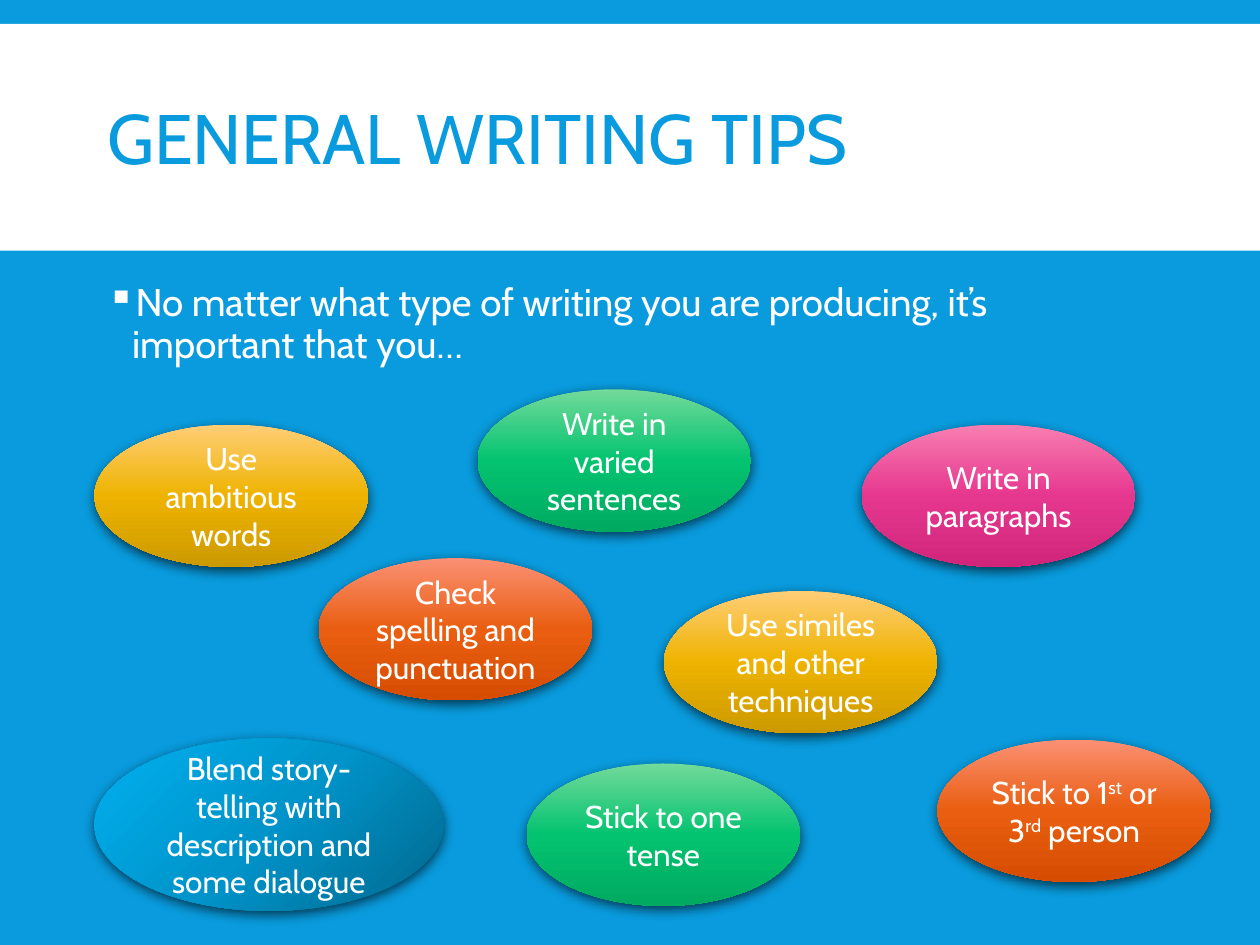
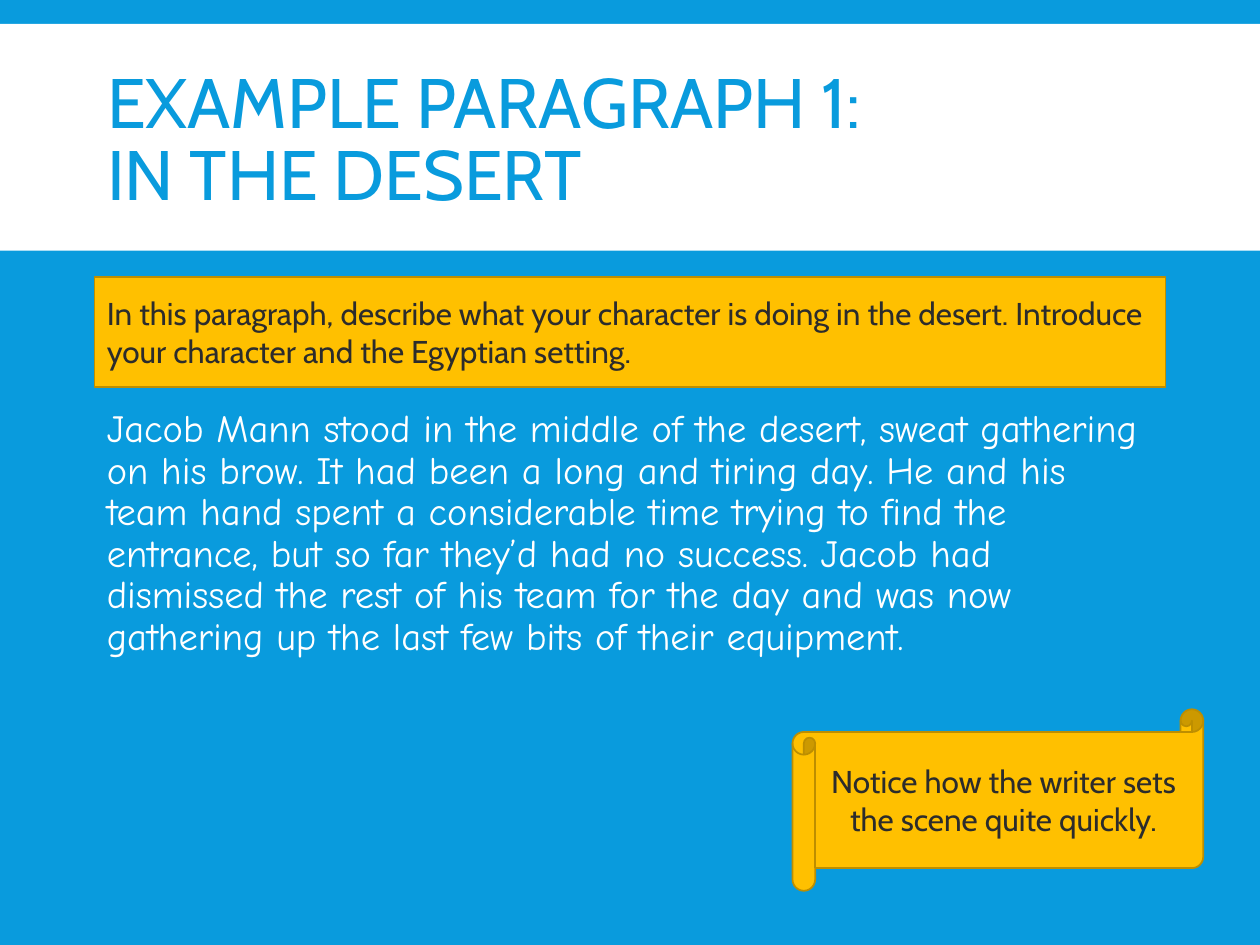
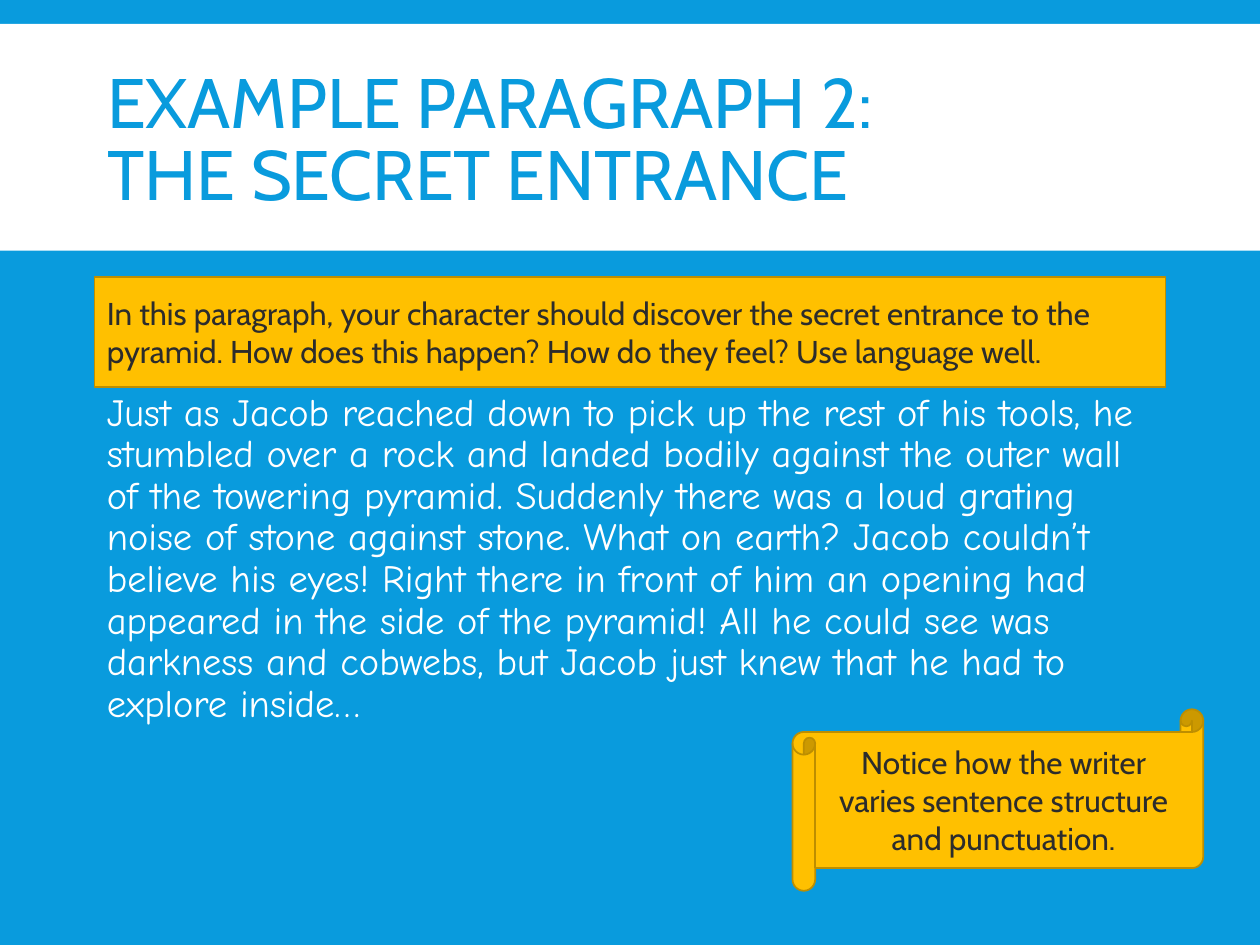
from collections import namedtuple

from pptx import Presentation
from pptx.dml.color import RGBColor
from pptx.enum.shapes import MSO_SHAPE as Preset
from pptx.enum.text import MSO_ANCHOR as Anchor, MSO_AUTO_SIZE as AutoSize, PP_ALIGN as Align
from pptx.oxml import parse_xml
from pptx.oxml.ns import nsdecls, qn
from pptx.util import Inches, Pt

BLUE = RGBColor(0x09, 0x9B, 0xDD)
WHITE = RGBColor(0xFF, 0xFF, 0xFF)
AMBER = RGBColor(0xFF, 0xC0, 0x00)
AMBER_EDGE = RGBColor(0xBD, 0x8E, 0x00)
INK = RGBColor(0x2C, 0x2C, 0x2C)
BLACK = RGBColor(0x00, 0x00, 0x00)

# Gradients run from the first colour to the last
GOLD = (RGBColor(0xFF, 0xCE, 0x77), RGBColor(0xEE, 0xB3, 0x00), RGBColor(0xCC, 0x9A, 0x00))
GREEN = (RGBColor(0x72, 0xDA, 0x9A), RGBColor(0x03, 0xC3, 0x70), RGBColor(0x00, 0xAA, 0x61))
PINK = (RGBColor(0xF8, 0x7E, 0xB1), RGBColor(0xE6, 0x37, 0x8F), RGBColor(0xD0, 0x25, 0x7B))
ORANGE = (RGBColor(0xFB, 0x90, 0x74), RGBColor(0xE9, 0x5E, 0x10), RGBColor(0xD6, 0x4D, 0x01))
OCEAN = (RGBColor(0x00, 0x68, 0x8E), RGBColor(0x00, 0x94, 0xCA), RGBColor(0x00, 0xB0, 0xF0))

HEADING_FONT = "Cabin"
STORY_FONT = "Comic Neue"

# Boxes are left, top, width, height in inches
Box = namedtuple("Box", "left top width height")
MARGIN, CONTENT_WIDTH = 0.75, 8.5
BAND = Box(0, 0.19, 10, 1.8)
TITLE = Box(MARGIN, 0.31, CONTENT_WIDTH, 1.65)
CONTENT = Box(MARGIN, 2.2, CONTENT_WIDTH, 4.6)
TASK_HEIGHT = 0.87
SCROLL = Box(6.29, 5.63, 3.26, 1.44)
TIPS = Box(MARGIN, 3.09, 8.86, 4.14)
TIP_SIZE = (2.17, 1.13)
LARGE_TIP_SIZE = (2.77, 1.37)

# Text, colours, angle, offset in the tips box, size; ^ encloses superscript
TIP_LIST = [
    ("Use ambitious words", GOLD, 90, (0, 0.28), TIP_SIZE),
    ("Write in varied sentences", GREEN, 90, (3.04, 0), TIP_SIZE),
    ("Write in paragraphs", PINK, 90, (6.09, 0.28), TIP_SIZE),
    ("Check spelling and punctuation", ORANGE, 90, (1.78, 1.34), TIP_SIZE),
    ("Use similes and other techniques", GOLD, 90, (4.52, 1.6), TIP_SIZE),
    ("Blend story-telling with description and some dialogue", OCEAN, 225, (0, 2.77),
     LARGE_TIP_SIZE),
    ("Stick to one tense", GREEN, 90, (3.43, 2.97), TIP_SIZE),
    ("Stick to 1^st^ or 3^rd^ person", ORANGE, 90, (6.69, 2.78), TIP_SIZE),
]

# Title, task, story, top and height of the story, remark
EXAMPLES = [
    ("EXAMPLE PARAGRAPH 1:\nIN THE DESERT",
     "In this paragraph, describe what your character is doing in the desert. "
     "Introduce your character and the Egyptian setting.",
     "Jacob Mann stood in the middle of the desert, sweat gathering on his brow. "
     "It had been a long and tiring day. He and his team hand spent a considerable "
     "time trying to find the entrance, but so far they’d had no success. Jacob had "
     "dismissed the rest of his team for the day and was now gathering up the last "
     "few bits of their equipment.",
     3.2, 4.06,
     "Notice how the writer sets the scene quite quickly."),
    ("EXAMPLE PARAGRAPH 2:\nTHE SECRET ENTRANCE",
     "In this paragraph, your character should discover the secret entrance to the "
     "pyramid. How does this happen? How do they feel? Use language well.",
     "Just as Jacob reached down to pick up the rest of his tools, he stumbled over a "
     "rock and landed bodily against the outer wall of the towering pyramid. Suddenly "
     "there was a loud grating noise of stone against stone. What on earth? Jacob "
     "couldn’t believe his eyes! Right there in front of him an opening had appeared "
     "in the side of the pyramid! All he could see was darkness and cobwebs, but Jacob "
     "just knew that he had to explore inside…",
     3.07, 3.73,
     "Notice how the writer varies sentence structure and punctuation."),
]


def to_inches(box):
    return [Inches(length) for length in box]


def write_text(shape, text, size=18, font=HEADING_FONT, color=WHITE, align=Align.LEFT,
               anchor=Anchor.MIDDLE, line_spacing=None, space_after=None, bullet=None):
    """Write one paragraph; a newline breaks the line and ^ encloses superscript."""
    frame = shape.text_frame
    frame.word_wrap = True
    frame.auto_size = AutoSize.NONE
    frame.vertical_anchor = anchor
    paragraph = frame.paragraphs[0]
    paragraph.alignment = align
    paragraph.line_spacing = line_spacing
    if space_after is not None:
        paragraph.space_after = Pt(space_after)
    if bullet:
        add_bullet(paragraph, bullet, color)
    for line_number, line in enumerate(text.split("\n")):
        if line_number:
            paragraph.add_line_break()
        for part_number, part in enumerate(line.split("^")):
            run = paragraph.add_run()
            run.text = part
            run.font.size = Pt(size)
            run.font.name = font
            run.font.color.rgb = color
            if part_number % 2:
                run.font._element.set("baseline", "30000")


def add_bullet(paragraph, character, color):
    properties = paragraph._p.get_or_add_pPr()
    properties.set("marL", str(Inches(0.2)))
    properties.set("indent", str(-Inches(0.2)))
    for element in (f'<a:buClr {nsdecls("a")}><a:srgbClr val="{color}"/></a:buClr>',
                    f'<a:buChar {nsdecls("a")} char="{character}"/>'):
        properties.append(parse_xml(element))


def add_panel(slide, preset, box, fill=None, line=None):
    shape = slide.shapes.add_shape(preset, *to_inches(box))
    shape.shadow.inherit = False
    if fill is not None:
        shape.fill.solid()
        shape.fill.fore_color.rgb = fill
    if line is None:
        shape.line.fill.background()
    else:
        shape.line.color.rgb = line
        shape.line.width = Pt(1)
    return shape


def set_gradient(shape, colors, angle):
    shape.fill.gradient()
    gradient = shape._element.spPr.find(qn("a:gradFill"))
    stops = "".join(f'<a:gs pos="{number * 50000}"><a:srgbClr val="{color}"/></a:gs>'
                    for number, color in enumerate(colors))
    gradient.getparent().replace(gradient, parse_xml(
        f'<a:gradFill {nsdecls("a")} rotWithShape="1"><a:gsLst>{stops}</a:gsLst>'
        f'<a:lin ang="{angle * 60000}" scaled="0"/></a:gradFill>'))


def add_shadow(shape):
    shape._element.spPr.find(qn("a:effectLst")).append(parse_xml(
        f'<a:outerShdw {nsdecls("a")} blurRad="{Pt(7)}" dist="{Pt(2.2)}" dir="5400000" '
        f'algn="ctr" rotWithShape="0"><a:srgbClr val="{BLACK}"><a:alpha val="63000"/>'
        f'</a:srgbClr></a:outerShdw>'))


def add_titled_slide(presentation, title):
    """Add a slide with the white band behind its title."""
    slide = presentation.slides.add_slide(presentation.slide_layouts[5])
    band = add_panel(slide, Preset.RECTANGLE, BAND, fill=WHITE)
    slide.shapes._spTree.insert(2, band._element)
    placeholder = slide.shapes.title
    placeholder.left, placeholder.top, placeholder.width, placeholder.height = to_inches(TITLE)
    write_text(placeholder, title, size=40, color=BLUE, line_spacing=0.85)
    return slide


def add_body(slide, box, text, **text_format):
    body = slide.shapes.add_textbox(*to_inches(box))
    write_text(body, text, size=22, anchor=Anchor.TOP, line_spacing=0.9, space_after=2,
               **text_format)


def add_tips(slide, box, tips):
    for text, colors, angle, (left, top), size in tips:
        tip = add_panel(slide, Preset.OVAL, Box(box.left + left, box.top + top, *size))
        set_gradient(tip, colors, angle)
        add_shadow(tip)
        write_text(tip, text, align=Align.CENTER)


def add_note(slide, preset, box, text, align):
    note = add_panel(slide, preset, box, fill=AMBER, line=AMBER_EDGE)
    write_text(note, text, color=INK, align=align)


def add_tips_slide(presentation):
    slide = add_titled_slide(presentation, "GENERAL WRITING TIPS")
    add_body(slide, CONTENT,
             "No matter what type of writing you are producing, it’s important that you…",
             bullet="▪")
    add_tips(slide, TIPS, TIP_LIST)


def add_example_slide(presentation, title, task, story, story_top, story_height, remark):
    slide = add_titled_slide(presentation, title)
    add_body(slide, CONTENT._replace(top=story_top, height=story_height), story,
             font=STORY_FONT)
    add_note(slide, Preset.RECTANGLE, CONTENT._replace(height=TASK_HEIGHT), task, Align.LEFT)
    add_note(slide, Preset.HORIZONTAL_SCROLL, SCROLL, remark, Align.CENTER)


def main():
    presentation = Presentation()
    presentation.slide_width, presentation.slide_height = Inches(10), Inches(7.5)
    background = presentation.slide_master.background.fill
    background.solid()
    background.fore_color.rgb = BLUE
    add_tips_slide(presentation)
    for example in EXAMPLES:
        add_example_slide(presentation, *example)
    presentation.save("out.pptx")


if __name__ == "__main__":
    main()
